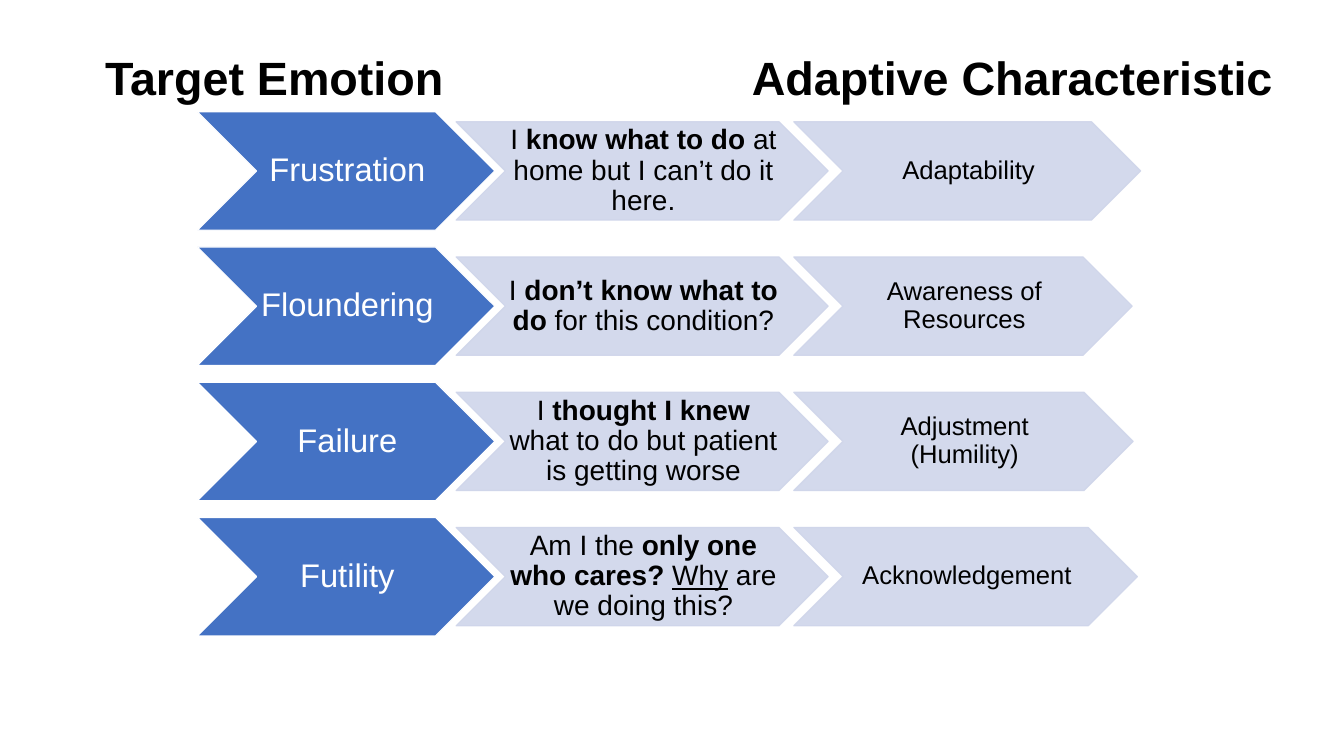
"""Build a slide that maps target emotions to adaptive characteristics."""
import pptx
import pptx.dml.color
import pptx.enum.dml
import pptx.enum.shapes
import pptx.enum.text
import pptx.oxml
import pptx.oxml.ns
import pptx.util

In, Pt = pptx.util.Inches, pptx.util.Pt
RGB = pptx.dml.color.RGBColor
PP_ALIGN, ANCHOR = pptx.enum.text.PP_ALIGN, pptx.enum.text.MSO_ANCHOR
BLUE, PALE = RGB(0x44, 0x72, 0xC4), RGB(0xCF, 0xD5, 0xEA)
WHITE, BLACK = RGB(255, 255, 255), RGB(0, 0, 0)
FONT = "Arial"

HEADINGS = ("Target Emotion", "Adaptive Characteristic")
ROWS = [
    ("Frustration",
     [("I ", ""), ("know what to do", "b"), (" at home but I can’t do it here.", "")],
     "Adaptability", 4.13),
    ("Floundering",
     [("I ", ""), ("don’t know what to do ", "b"), ("for this condition?", "")],
     "Awareness of Resources", 4.03),
    ("Failure",
     [("I ", ""), ("thought I knew ", "b"), ("what to do but patient is getting worse", "")],
     "Adjustment (Humility)", 4.04),
    ("Futility",
     [("Am I the ", ""), ("only one who cares? ", "b"), ("Why", "u"), (" are we doing this?", "")],
     "Acknowledgement", 4.09),
]
EMOTION_X, THOUGHT_X, TRAIT_X = 2.35, 5.43, 9.45
EMOTION_W, THOUGHT_W = 3.54, 4.43
EMOTION_H, DETAIL_H = 1.41, 1.17
FIRST_CENTRE, ROW_PITCH = 2.035, 1.61
HEADING_TAB = 7.7


def add_title(slide):
    sp = slide.shapes.title
    sp.left, sp.top, sp.width, sp.height = In(1.11), In(0.51), In(14.31), In(0.82)
    tf = sp.text_frame
    tf.vertical_anchor = ANCHOR.TOP
    tf.margin_left = tf.margin_right = In(0.14)
    tf.margin_top = tf.margin_bottom = In(0.07)
    p = tf.paragraphs[0]
    p.add_run().text = "\t".join(HEADINGS)
    p.alignment = PP_ALIGN.LEFT
    tabs = pptx.oxml.parse_xml(
        f'<a:tabLst {pptx.oxml.ns.nsdecls("a")}><a:tab pos="{In(HEADING_TAB)}" algn="l"/></a:tabLst>')
    p._p.get_or_add_pPr().append(tabs)
    p.font.name, p.font.size, p.font.bold = FONT, Pt(40), True
    p.font.color.rgb = BLACK


def add_chevron(slide, x, centre, width, height, runs, size, fill, line, color, alpha=None):
    sp = slide.shapes.add_shape(pptx.enum.shapes.MSO_SHAPE.CHEVRON,
                                In(x), In(centre - height / 2), In(width), In(height))
    sp.shadow.inherit = False
    sp.fill.solid()
    sp.fill.fore_color.rgb = fill
    sp.line.color.rgb = line
    sp.line.width = Pt(1)
    if alpha:
        for clr in sp._element.spPr.iter(pptx.oxml.ns.qn("a:srgbClr")):
            clr.append(pptx.oxml.parse_xml(
                f'<a:alpha {pptx.oxml.ns.nsdecls("a")} val="{alpha * 1000}"/>'))
    tf = sp.text_frame
    tf.word_wrap = True
    tf.vertical_anchor = ANCHOR.MIDDLE
    tf.margin_left, tf.margin_right = In(0.03), 0
    tf.margin_top = tf.margin_bottom = In(0.02)
    p = tf.paragraphs[0]
    p.alignment, p.line_spacing = PP_ALIGN.CENTER, 0.9
    p.font.name, p.font.size = FONT, Pt(size)
    p.font.color.rgb = color
    for text, style in runs:
        r = p.add_run()
        r.text = text
        if style == "b":
            r.font.bold = True
        elif style == "u":
            r.font.underline = True


def main():
    prs = pptx.Presentation()
    prs.slide_width, prs.slide_height = In(16), In(9)
    slide = prs.slides.add_slide(prs.slide_layouts.get_by_name("Title Only"))
    add_title(slide)
    for i, (emotion, thought, trait, trait_w) in enumerate(ROWS):
        centre = FIRST_CENTRE + i * ROW_PITCH
        add_chevron(slide, EMOTION_X, centre, EMOTION_W, EMOTION_H,
                    [(emotion, "")], 28, BLUE, WHITE, WHITE)
        for x, width, runs, size in ((THOUGHT_X, THOUGHT_W, thought, 24),
                                     (TRAIT_X, trait_w, [(trait, "")], 22)):
            add_chevron(slide, x, centre, width, DETAIL_H, runs, size, PALE, PALE, BLACK, 90)
    prs.save("out.pptx")


if __name__ == "__main__":
    main()
